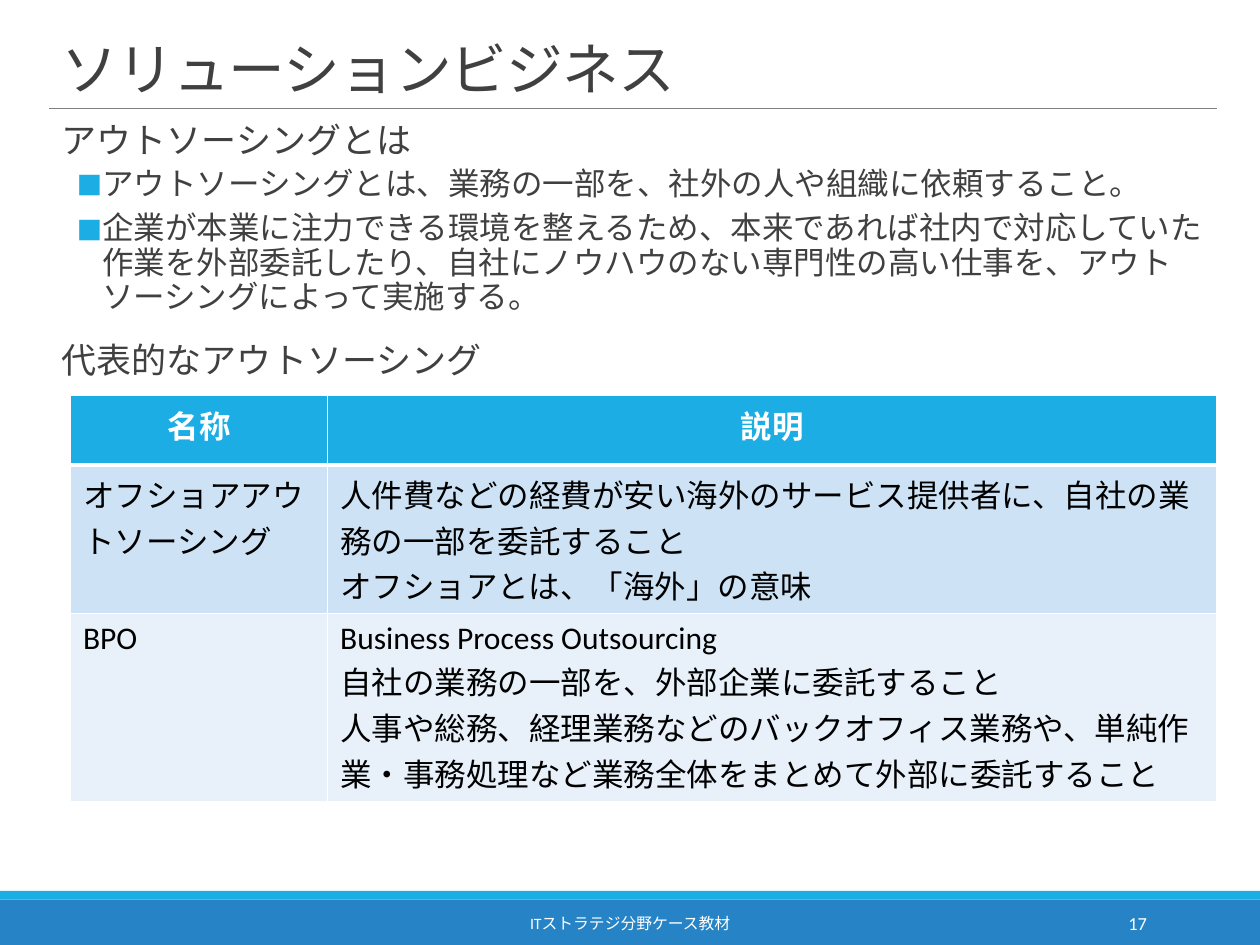
from lxml.etree import SubElement
from pptx import Presentation
from pptx.dml.color import RGBColor
from pptx.enum.shapes import MSO_CONNECTOR, MSO_SHAPE
from pptx.enum.text import MSO_ANCHOR, PP_ALIGN
from pptx.oxml.ns import qn
from pptx.util import Inches, Pt

COLUMNS, ROWS = 100, 75
WIDTH, HEIGHT = Inches(10), Inches(7.5)
LEFT, CONTENT_WIDTH = 3.9, 92.7
FONT = "Calibri"
COLORS = {
    "text": "404040", "rule": "808080", "white": "FFFFFF", "black": "000000",
    "accent": "1CADE4", "footer": "2683C6", "odd_row": "CDE3F5", "even_row": "E8F1FA",
}
HEADING = {"size": 20, "before": 12, "after": 2, "margin": 0.1}
BULLET = {"size": 18, "before": 2, "after": 4, "margin": 0.42, "hanging": 0.2, "bullet": "■"}
BODY = [
    ("アウトソーシングとは", HEADING),
    ("アウトソーシングとは、業務の一部を、社外の人や組織に依頼すること。", BULLET),
    ("企業が本業に注力できる環境を整えるため、本来であれば社内で対応していた作業を外部委託したり、"
     "自社にノウハウのない専門性の高い仕事を、アウトソーシングによって実施する。", BULLET),
    ("代表的なアウトソーシング", HEADING),
]
TABLE = [
    (["名称"], ["説明"]),
    (["オフショアアウトソーシング"],
     ["人件費などの経費が安い海外のサービス提供者に、自社の業務の一部を委託すること",
      "オフショアとは、「海外」の意味"]),
    (["BPO"],
     ["Business Process Outsourcing",
      "自社の業務の一部を、外部企業に委託すること",
      "人事や総務、経理業務などのバックオフィス業務や、単純作業・事務処理など業務全体をまとめて外部に委託すること"]),
]


def color(name):
    return RGBColor.from_string(COLORS[name])


def across(columns):
    return round(WIDTH * columns / COLUMNS)


def down(rows):
    return round(HEIGHT * rows / ROWS)


def area(left, top, width, height):
    return across(left), down(top), across(width), down(height)


def write(paragraph, text, size=18, ink="text", bold=False, align=None, line=None,
          before=0, after=0, margin=0, hanging=0, bullet=None, tracking=None):
    """Fill one paragraph; margin and hanging are in inches, the rest in points."""
    run = paragraph.add_run()
    run.text = text
    run.font.name, run.font.size, run.font.bold = FONT, Pt(size), bold
    run.font.color.rgb = color(ink)
    paragraph.alignment = align
    paragraph.line_spacing = line
    paragraph.space_before, paragraph.space_after = Pt(before), Pt(after)
    properties = paragraph._p.get_or_add_pPr()
    properties.set("marL", str(Inches(margin)))
    properties.set("indent", str(-Inches(hanging)))
    if bullet:
        bullet_color = SubElement(properties, qn("a:buClr"))
        SubElement(bullet_color, qn("a:srgbClr"), val=COLORS["accent"])
        SubElement(properties, qn("a:buSzPct"), val="85000")
        SubElement(properties, qn("a:buFont"), typeface=FONT)
        SubElement(properties, qn("a:buChar"), char=bullet)
    if tracking is not None:
        run.font._element.set("spc", str(round(tracking * 100)))


def write_all(frame, items):
    """Write (text, format) pairs as the paragraphs of a text frame."""
    for index, (text, style) in enumerate(items):
        paragraph = frame.add_paragraph() if index else frame.paragraphs[0]
        write(paragraph, text, **style)


def add_text(slide, box, items, anchor=MSO_ANCHOR.TOP, side_inset=0.1):
    frame = slide.shapes.add_textbox(*area(*box)).text_frame
    frame.word_wrap = True
    frame.vertical_anchor = anchor
    frame.margin_left = frame.margin_right = Inches(side_inset)
    write_all(frame, items)


def add_band(slide, top, height, fill):
    band = slide.shapes.add_shape(MSO_SHAPE.RECTANGLE, *area(0, top, COLUMNS, height))
    band.shadow.inherit = False
    band.fill.solid()
    band.fill.fore_color.rgb = color(fill)
    band.line.fill.background()


def add_rule(slide, top):
    rule = slide.shapes.add_connector(
        MSO_CONNECTOR.STRAIGHT, across(LEFT), down(top),
        across(LEFT + CONTENT_WIDTH), down(top))
    rule.line.color.rgb = color("rule")
    rule.line.width = Pt(0.5)
    SubElement(rule._element.spPr, qn("a:effectLst"))


def style_cell(cell, fill, bottom_width):
    properties = cell._tc.get_or_add_tcPr()
    for side, width in (("L", 1), ("R", 1), ("T", 1), ("B", bottom_width)):
        border = SubElement(properties, qn(f"a:ln{side}"), w=str(Pt(width)))
        border_fill = SubElement(border, qn("a:solidFill"))
        SubElement(border_fill, qn("a:srgbClr"), val=COLORS["white"])
    cell.fill.solid()
    cell.fill.fore_color.rgb = color(fill)


def add_table(slide, left, top, column_widths, row_heights):
    box = area(left, top, sum(column_widths), sum(row_heights))
    table = slide.shapes.add_table(len(TABLE), len(column_widths), *box).table
    for column, width in zip(table.columns, column_widths):
        column.width = across(width)
    header = {"ink": "white", "bold": True, "align": PP_ALIGN.CENTER}
    for row_index, row in enumerate(TABLE):
        table.rows[row_index].height = down(row_heights[row_index])
        style = {"ink": "black"} if row_index else header
        fill = ("accent", "odd_row", "even_row")[row_index]
        for column_index, lines in enumerate(row):
            cell = table.cell(row_index, column_index)
            style_cell(cell, fill, bottom_width=1 if row_index else 3)
            write_all(cell.text_frame, [(text, style) for text in lines])


def main():
    presentation = Presentation()
    presentation.slide_width, presentation.slide_height = WIDTH, HEIGHT
    slide = presentation.slides.add_slide(presentation.slide_layouts[6])

    add_band(slide, 71.4, 3.6, "footer")
    add_band(slide, 70.7, 0.7, "accent")
    add_rule(slide, 8.6)
    add_text(slide, (LEFT, 3.1, CONTENT_WIDTH, 5.5),
             [("ソリューションビジネス", {"size": 32.4, "line": 0.85, "tracking": -0.5})],
             anchor=MSO_ANCHOR.BOTTOM)
    add_text(slide, (LEFT, 9.3, CONTENT_WIDTH, 60.9),
             [(text, {**style, "line": 0.9}) for text, style in BODY], side_inset=0)
    add_text(slide, (30.2, 71.9, 39.6, 2.8),
             [("ITストラテジ分野ケース教材", {"size": 9, "ink": "white", "align": PP_ALIGN.CENTER})],
             anchor=MSO_ANCHOR.MIDDLE)
    add_text(slide, (81.2, 71.9, 10.8, 2.8),
             [("17", {"size": 10.5, "ink": "white", "align": PP_ALIGN.RIGHT})],
             anchor=MSO_ANCHOR.MIDDLE)
    add_table(slide, 5.6, 31.4, column_widths=(20.4, 70.6), row_heights=(5.5, 11.8, 14.9))

    presentation.save("out.pptx")


if __name__ == "__main__":
    main()
